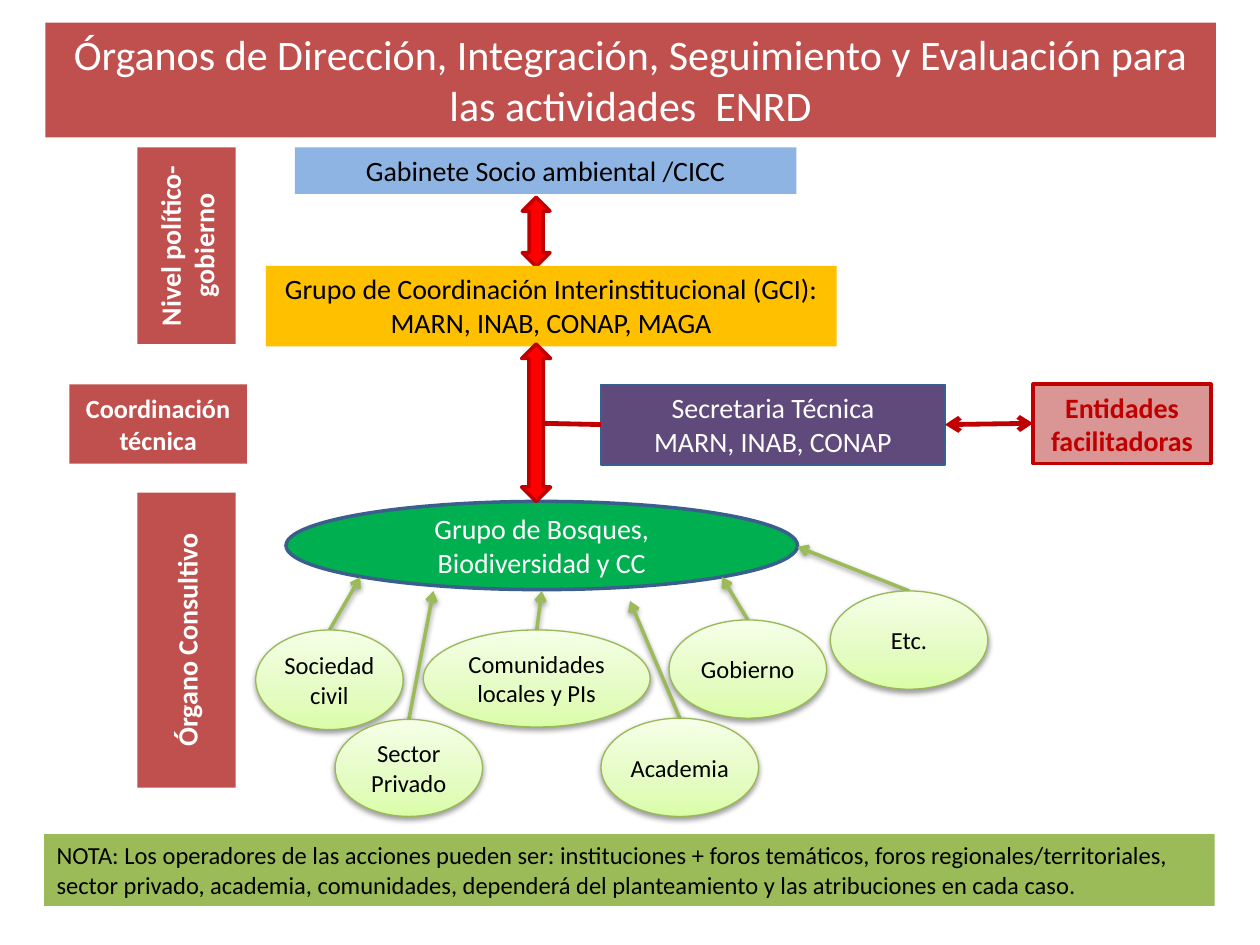
from dataclasses import dataclass

from pptx import Presentation
from pptx.dml.color import RGBColor
from pptx.enum.shapes import MSO_CONNECTOR as Connector, MSO_SHAPE as Preset
from pptx.enum.text import MSO_ANCHOR as Anchor, MSO_AUTO_SIZE as AutoSize, PP_ALIGN as Align
from pptx.oxml.ns import qn
from pptx.util import Inches, Pt
from lxml import etree


@dataclass(frozen=True)
class Theme:
    font: str = "Calibri"
    white: str = "FFFFFF"
    black: str = "000000"
    brick: str = "C0504D"
    olive: str = "9BBB59"
    olive_edge: str = "98B955"
    forest: str = "00B050"
    forest_edge: str = "3A5F8C"
    sky: str = "8EB4E3"
    amber: str = "FFC000"
    purple: str = "604A7B"
    purple_edge: str = "376092"
    rose: str = "D99694"
    red: str = "FF0000"
    crimson: str = "C00000"
    member_stops: tuple = ((0, "DAFDA7"), (35, "E4FCC2"), (100, "F5FFE7"))
    title: int = 24
    body: int = 16
    label: int = 15
    small: int = 14


THEME = Theme()


def rgb(value):
    return RGBColor.from_string(value)


def child(parent, tag, **attributes):
    return etree.SubElement(parent, qn(tag), attributes)


def add_soft_shadow(effects):
    shadow = child(effects, "a:outerShdw", blurRad="40000", dist="20000",
                   dir="5400000", rotWithShape="0")
    color = child(shadow, "a:srgbClr", val=THEME.black)
    child(color, "a:alpha", val="38000")


def write(shape, text, size, color, bold=False, align=Align.CENTER, anchor=Anchor.MIDDLE):
    frame = shape.text_frame
    frame.text = text
    frame.word_wrap = True
    frame.auto_size = AutoSize.NONE
    frame.vertical_anchor = anchor
    for paragraph in frame.paragraphs:
        paragraph.alignment = align
        paragraph.font.name = THEME.font
        paragraph.font.size = Pt(size)
        paragraph.font.bold = bold
        paragraph.font.color.rgb = rgb(color)


def fill_solid(shape, color):
    shape.fill.solid()
    shape.fill.fore_color.rgb = rgb(color)


def add_panel(slide, box, fill, edge=None, width=2, preset=Preset.RECTANGLE, rotation=0):
    shape = slide.shapes.add_shape(preset, *map(Inches, box))
    shape.shadow.inherit = False
    shape.rotation = rotation
    fill_solid(shape, fill)
    if edge:
        shape.line.color.rgb = rgb(edge)
        shape.line.width = Pt(width)
    else:
        shape.line.fill.background()
    return shape


def add_level(slide, box, text, size=THEME.body, rotation=0):
    write(add_panel(slide, box, THEME.brick, rotation=rotation),
          text, size, THEME.white, bold=True)


def add_member(slide, box, text):
    shape = add_panel(slide, box, THEME.white, THEME.olive_edge, 0.75, Preset.OVAL)
    shape.fill.gradient()
    shape.fill.gradient_angle = 90
    properties = shape._element.spPr
    stops = properties.find(".//" + qn("a:gsLst"))
    for stop in list(stops):
        stops.remove(stop)
    for position, color in THEME.member_stops:
        stop = child(stops, "a:gs", pos=str(position * 1000))
        child(stop, "a:srgbClr", val=color)
    add_soft_shadow(properties.find(qn("a:effectLst")))
    write(shape, text, THEME.small, THEME.black)
    frame = shape.text_frame
    frame.margin_left = frame.margin_right = Inches(0.04)
    frame.margin_top = frame.margin_bottom = Inches(0.04)


def add_line(slide, start, end, color, width, arrows=(), shadow=False):
    line = slide.shapes.add_connector(Connector.STRAIGHT, *map(Inches, start + end))
    line.line.color.rgb = rgb(color)
    line.line.width = Pt(width)
    properties = line._element.spPr
    for arrow in arrows:
        child(properties.find(qn("a:ln")), arrow, type="arrow")
    effects = child(properties, "a:effectLst")
    if shadow:
        add_soft_shadow(effects)


def add_title(slide):
    title = slide.shapes.title
    title.left, title.top, title.width, title.height = map(Inches, (0.36, 0.18, 9.29, 0.91))
    fill_solid(title, THEME.brick)
    write(title, "Órganos de Dirección, Integración, Seguimiento y Evaluación para "
          "las actividades  ENRD", THEME.title, THEME.white, anchor=Anchor.TOP)


def add_consultative_body(slide):
    add_level(slide, (0.31, 4.69, 2.34, 0.78), "Órgano Consultivo", rotation=270)
    forum = add_panel(slide, (2.27, 3.98, 4.06, 0.7), THEME.forest,
                      THEME.forest_edge, preset=Preset.OVAL)
    write(forum, "Grupo de Bosques, Biodiversidad y CC", THEME.body, THEME.white)
    members = [
        ("Sociedad civil", (2.03, 5, 1.17, 0.79), (2.86, 4.58)),
        ("Comunidades locales y PIs", (3.36, 5, 1.8, 0.77), (4.3, 4.69)),
        ("Sector Privado", (2.66, 5.71, 1.17, 0.77), (3.44, 4.69)),
        ("Academia", (4.77, 5.7, 1.25, 0.78), (5, 4.77)),
        ("Gobierno", (5.31, 4.92, 1.25, 0.78), (5.73, 4.58)),
        ("Etc.", (6.59, 4.69, 1.25, 0.78), (6.33, 4.34)),
    ]
    for text, box, target in members:
        left, top, width, height = box
        add_line(slide, target, (left + width / 2, top), THEME.olive, 2,
                 ["a:headEnd"], shadow=True)
    for text, box, target in members:
        add_member(slide, box, text)


def add_exchange_arrow(slide, box):
    add_panel(slide, box, THEME.red, THEME.crimson,
              preset=Preset.LEFT_RIGHT_ARROW, rotation=270)


def add_political_level(slide):
    cabinet = add_panel(slide, (2.34, 1.17, 3.98, 0.37), THEME.sky)
    write(cabinet, "Gabinete Socio ambiental /CICC", THEME.body, THEME.black,
          anchor=Anchor.TOP)
    add_level(slide, (0.7, 1.56, 1.56, 0.78), "Nivel político-gobierno", rotation=270)
    add_exchange_arrow(slide, (3.98, 1.73, 0.55, 0.22))
    group = add_panel(slide, (2.11, 2.11, 4.53, 0.64), THEME.amber)
    write(group, "Grupo de Coordinación Interinstitucional (GCI): MARN, INAB, CONAP, MAGA",
          THEME.body, THEME.black, anchor=Anchor.TOP)


def add_technical_level(slide):
    add_exchange_arrow(slide, (3.63, 3.24, 1.25, 0.23))
    add_level(slide, (0.55, 3.05, 1.41, 0.63), "Coordinación\ntécnica", THEME.label)
    partners = add_panel(slide, (8.2, 3.05, 1.41, 0.63), THEME.rose, THEME.crimson)
    write(partners, "Entidades facilitadoras", THEME.body, THEME.crimson, bold=True)
    secretariat = add_panel(slide, (4.77, 3.05, 2.73, 0.64), THEME.purple,
                            THEME.purple_edge, 0.75)
    write(secretariat, "Secretaria Técnica\nMARN, INAB, CONAP", THEME.body, THEME.white,
          anchor=Anchor.TOP)
    add_line(slide, (4.32, 3.36), (4.77, 3.37), THEME.crimson, 2.75)
    add_line(slide, (8.2, 3.36), (7.5, 3.37), THEME.crimson, 2.75,
             ["a:headEnd", "a:tailEnd"])


def add_note(slide):
    note = add_panel(slide, (0.35, 6.62, 9.29, 0.57), THEME.olive)
    write(note, "NOTA: Los operadores de las acciones pueden ser: instituciones + foros "
          "temáticos, foros regionales/territoriales, sector privado, academia, comunidades, "
          "dependerá del planteamiento y las atribuciones en cada caso.",
          THEME.small, THEME.black, align=Align.LEFT, anchor=Anchor.TOP)


def main():
    presentation = Presentation()
    presentation.slide_width = Inches(10)
    presentation.slide_height = Inches(7.5)
    slide = presentation.slides.add_slide(presentation.slide_layouts[5])
    add_title(slide)
    add_note(slide)
    add_consultative_body(slide)
    add_political_level(slide)
    add_technical_level(slide)
    presentation.save("out.pptx")


if __name__ == "__main__":
    main()
